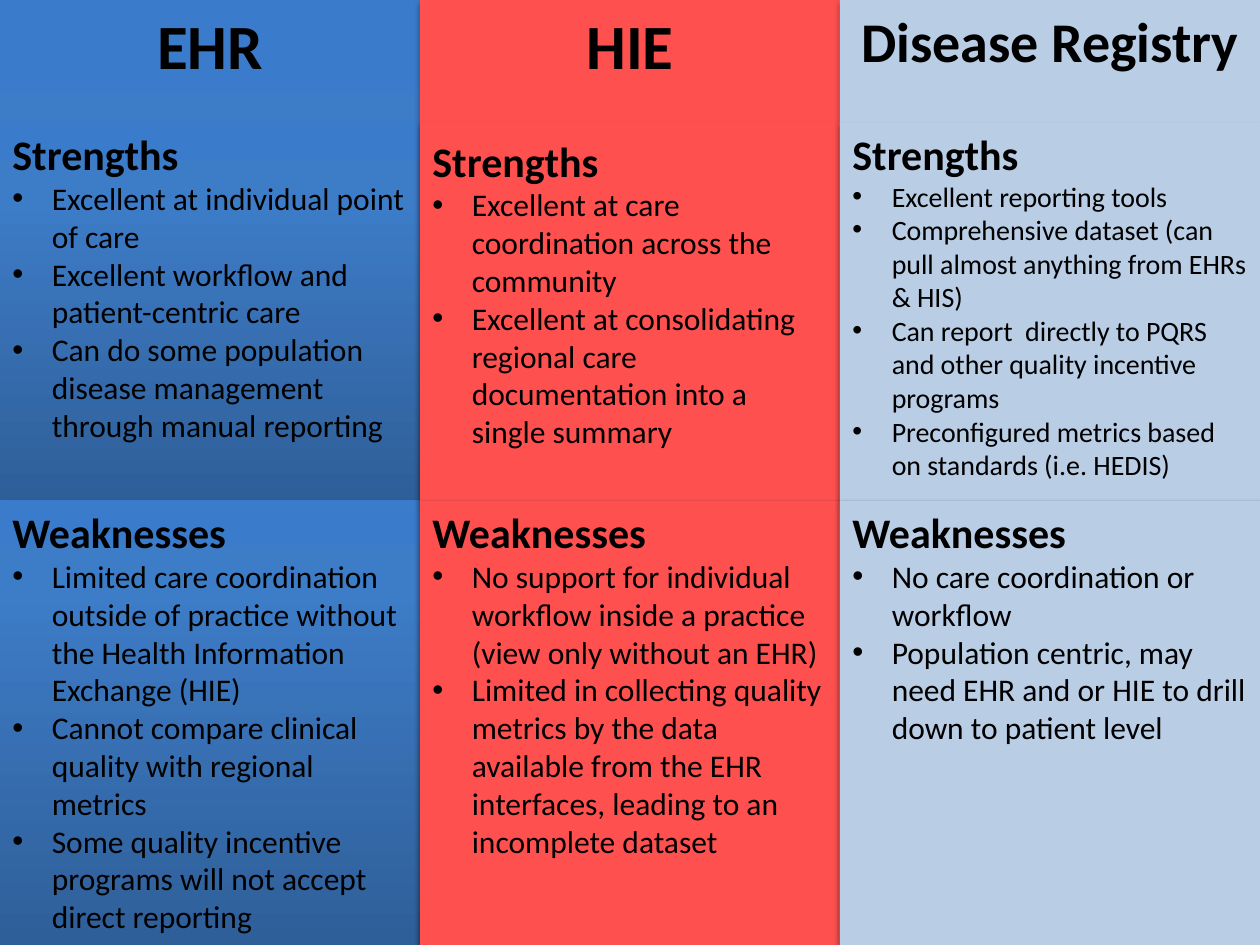
from copy import deepcopy

from lxml import etree
from pptx import Presentation
from pptx.dml import color
from pptx.enum import shapes, text
from pptx.oxml import ns
from pptx.util import Pt

BLACK = color.RGBColor(0x00, 0x00, 0x00)
RED = color.RGBColor(0xFF, 0x50, 0x50)
PALE_BLUE = color.RGBColor(0xB9, 0xCD, 0xE5)
BLUE_STOPS = [
    (0, color.RGBColor(0x2F, 0x5F, 0x99)),
    (0.8, color.RGBColor(0x3D, 0x7C, 0xC7)),
    (1, color.RGBColor(0x3A, 0x7C, 0xCB)),
]

SLIDE_WIDTH, SLIDE_HEIGHT = 720, 540
STRENGTHS_TOP, WEAKNESSES_TOP = 70, 286
BULLET_INDENT = 22.5

COLUMNS = [
    {
        "title": "EHR", "title_size": 36, "fill": BLUE_STOPS,
        "strengths": [
            "Excellent at individual point of care",
            "Excellent workflow and patient-centric care",
            "Can do some population disease management through manual reporting",
        ],
        "weaknesses": [
            "Limited care coordination outside of practice without the Health Information Exchange (HIE)",
            "Cannot compare clinical quality with regional metrics",
            "Some quality incentive programs will not accept direct reporting",
        ],
    },
    {
        "title": "HIE", "title_size": 36, "fill": RED, "strengths_inset": 7.2,
        "strengths": [
            "Excellent at care coordination across the community",
            "Excellent at consolidating regional care documentation into a single summary",
        ],
        "weaknesses": [
            "No support for individual workflow inside a practice (view only without an EHR)",
            "Limited in collecting quality metrics by the data available from the EHR interfaces, "
            "leading to an incomplete dataset",
        ],
    },
    {
        "title": "Disease Registry", "title_size": 32, "fill": PALE_BLUE, "strengths_size": 16,
        "strengths": [
            "Excellent reporting tools",
            "Comprehensive dataset (can pull almost anything from EHRs & HIS)",
            "Can report  directly to PQRS and other quality incentive programs",
            "Preconfigured metrics based on standards (i.e. HEDIS)",
        ],
        "weaknesses": [
            "No care coordination or workflow",
            "Population centric, may need EHR and or HIE to drill down to patient level",
        ],
    },
]


def fill_gradient(shape, stops):
    shape.fill.gradient()
    shape.fill.gradient_angle = 90
    stop_list = shape._element.spPr.find(".//" + ns.qn("a:gsLst"))
    stop_list.append(deepcopy(stop_list[-1]))
    for stop, (position, rgb) in zip(shape.fill.gradient_stops, stops):
        stop.position = position
        stop.color.rgb = rgb


def add_shadow(shape):
    shape.shadow.inherit = False
    effects = shape._element.spPr.find(ns.qn("a:effectLst"))
    shadow = etree.SubElement(
        effects, ns.qn("a:outerShdw"), blurRad=str(Pt(3.1)), dist=str(Pt(1.8)),
        dir="5400000", rotWithShape="0")
    shade = etree.SubElement(shadow, ns.qn("a:srgbClr"), val=str(BLACK))
    etree.SubElement(shade, ns.qn("a:alpha"), val="35000")


def add_panel(slide, left, top, width, height, fill, inset=3.6):
    shape = slide.shapes.add_shape(
        shapes.MSO_SHAPE.RECTANGLE, Pt(left), Pt(top), Pt(width), Pt(height))
    if isinstance(fill, list):
        fill_gradient(shape, fill)
    else:
        shape.fill.solid()
        shape.fill.fore_color.rgb = fill
    shape.line.fill.background()
    add_shadow(shape)
    frame = shape.text_frame
    frame.word_wrap = True
    frame.vertical_anchor = text.MSO_ANCHOR.TOP
    frame.margin_top = Pt(inset)
    return frame


def write_paragraph(paragraph, words, size, bold=False, alignment=text.PP_ALIGN.LEFT):
    paragraph.text = words
    paragraph.alignment = alignment
    paragraph.font.name = "Calibri"
    paragraph.font.size = Pt(size)
    paragraph.font.bold = bold
    paragraph.font.color.rgb = BLACK


def add_bullet(paragraph):
    properties = paragraph._p.get_or_add_pPr()
    properties.set("marL", str(Pt(BULLET_INDENT)))
    properties.set("indent", str(-Pt(BULLET_INDENT)))
    etree.SubElement(properties, ns.qn("a:buFont"), typeface="Arial")
    etree.SubElement(properties, ns.qn("a:buChar"), char="•")


def write_list(frame, heading, items, size=18):
    write_paragraph(frame.paragraphs[0], heading, 24, bold=True)
    for item in items:
        paragraph = frame.add_paragraph()
        add_bullet(paragraph)
        write_paragraph(paragraph, item, size)


def add_column(slide, left, top, width, height, column):
    fill = column["fill"]
    title = add_panel(slide, left, top, width, height, fill)
    write_paragraph(title.paragraphs[0], column["title"], column["title_size"],
                    bold=True, alignment=text.PP_ALIGN.CENTER)
    strengths = add_panel(slide, left, top + STRENGTHS_TOP, width,
                          WEAKNESSES_TOP - STRENGTHS_TOP, fill,
                          column.get("strengths_inset", 3.6))
    write_list(strengths, "Strengths", column["strengths"], column.get("strengths_size", 18))
    weaknesses = add_panel(slide, left, top + WEAKNESSES_TOP, width,
                           height - WEAKNESSES_TOP, fill)
    write_list(weaknesses, "Weaknesses", column["weaknesses"])


def main():
    presentation = Presentation()
    presentation.slide_width = Pt(SLIDE_WIDTH)
    presentation.slide_height = Pt(SLIDE_HEIGHT)
    slide = presentation.slides.add_slide(presentation.slide_layouts[6])
    column_width = SLIDE_WIDTH / len(COLUMNS)
    for index, column in enumerate(COLUMNS):
        add_column(slide, index * column_width, 0, column_width, SLIDE_HEIGHT, column)
    presentation.save("out.pptx")


if __name__ == "__main__":
    main()
